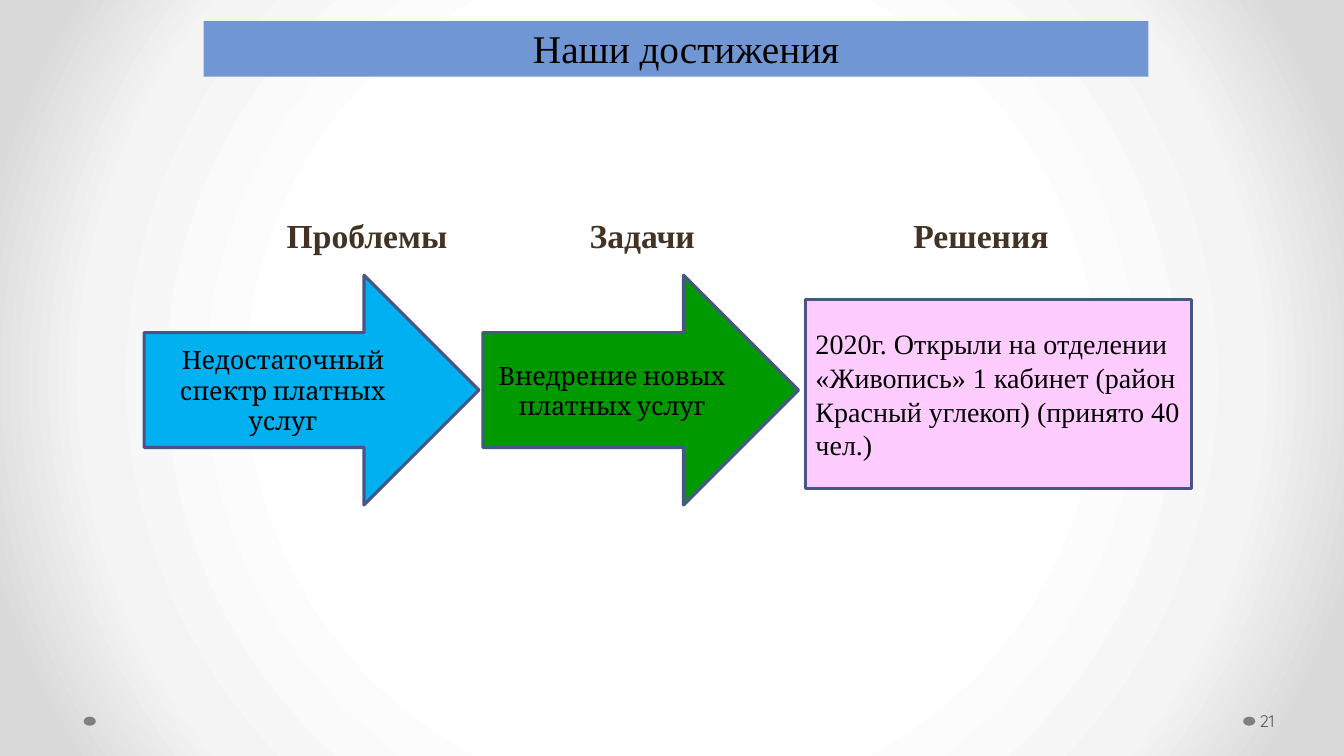
from lxml import etree
from pptx import Presentation
from pptx.dml.color import RGBColor
from pptx.enum import shapes, text
from pptx.oxml.ns import qn
from pptx.util import Inches, Pt

BLACK = RGBColor(0x00, 0x00, 0x00)
BANNER = RGBColor(0x70, 0x97, 0xD3)
BROWN = RGBColor(0x42, 0x33, 0x24)
SKY = RGBColor(0x00, 0xB0, 0xF0)
GREEN = RGBColor(0x00, 0x9A, 0x00)
PINK = RGBColor(0xFF, 0xCC, 0xFF)
OUTLINE = RGBColor(0x47, 0x57, 0x85)
DOT = RGBColor(0x80, 0x80, 0x80)
NUMBER = RGBColor(0x59, 0x59, 0x59)
GLOW = ((50, "FFFFFF"), (76, "F4F4F4"), (92, "DADADA"))
SERIF = "Times New Roman"
LEFT, CENTER = text.PP_ALIGN.LEFT, text.PP_ALIGN.CENTER
MIDDLE = text.MSO_ANCHOR.MIDDLE


def set_text(sp, words, font, size, color, align=CENTER, anchor=MIDDLE, bold=False):
    tf = sp.text_frame
    tf.text = words
    tf.word_wrap = True
    tf.auto_size = text.MSO_AUTO_SIZE.NONE
    tf.vertical_anchor = anchor
    p = tf.paragraphs[0]
    p.alignment = align
    f = p.runs[0].font
    f.name, f.size, f.bold = font, Pt(size), bold
    f.color.rgb = color


def add_block(s, kind, box, fill, line=None):
    sp = s.shapes.add_shape(kind, *map(Inches, box))
    sp.shadow.inherit = False
    sp.fill.solid()
    sp.fill.fore_color.rgb = fill
    if line is None:
        sp.line.fill.background()
    else:
        sp.line.color.rgb = line
        sp.line.width = Pt(2.25)
    return sp


def add_label(s, box, words, font, size, color, **style):
    sp = s.shapes.add_textbox(*map(Inches, box))
    set_text(sp, words, font, size, color, **style)
    return sp


def paint_background(s):
    """Radial gradient, white in the centre and grey at the edges."""
    s.background.fill.gradient()
    grad = s.element.find(".//" + qn("a:gradFill"))
    for child in list(grad):
        grad.remove(child)
    stops = etree.SubElement(grad, qn("a:gsLst"))
    for pos, color in GLOW:
        stop = etree.SubElement(stops, qn("a:gs"), pos=str(pos * 1000))
        etree.SubElement(stop, qn("a:srgbClr"), val=color)
    circle = etree.SubElement(grad, qn("a:path"), path="circle")
    etree.SubElement(circle, qn("a:fillToRect"), {side: "50000" for side in "ltrb"})


def add_banner(s, box):
    title = s.shapes.title
    title.left, title.top, title.width, title.height = map(Inches, box)
    title.fill.solid()
    title.fill.fore_color.rgb = BANNER
    set_text(title, "Наши достижения", SERIF, 28, BLACK,
             anchor=text.MSO_ANCHOR.BOTTOM)
    title.text_frame.margin_left = Inches(0.3)


def add_headings(s, top, height):
    width = 2.4
    for middle, words in ((3.64, "Проблемы"), (6.37, "Задачи"), (9.73, "Решения")):
        add_label(s, (middle - width / 2, top, width, height), words,
                  SERIF, 24, BROWN, bold=True)


def add_flow(s, left, top, height):
    """Problem arrow, task arrow and solution box on one centre line."""
    arrow, rect = shapes.MSO_SHAPE.RIGHT_ARROW, shapes.MSO_SHAPE.RECTANGLE
    problem = add_block(s, arrow, (left, top, 3.32, height), SKY, OUTLINE)
    set_text(problem, "Недостаточный спектр платных услуг", "Cambria", 18, BLACK)
    task = add_block(s, arrow, (left + 3.36, top, 3.13, height), GREEN, OUTLINE)
    set_text(task, "Внедрение новых платных услуг", "Cambria", 18, BLACK)
    solution = add_block(s, rect, (left + 6.56, top + 0.24, 3.83, 1.88), PINK, OUTLINE)
    set_text(solution, "2020г. Открыли на отделении «Живопись» 1 кабинет "
             "(район Красный углекоп) (принято 40 чел.)", SERIF, 20, BLACK, align=LEFT)


def add_footer(s, top):
    for left in (0.83, 12.33):
        add_block(s, shapes.MSO_SHAPE.OVAL, (left, top + 0.16, 0.12, 0.09), DOT)
    number = add_label(s, (12.46, top, 0.82, 0.4), "21", "Quicksand", 12, NUMBER,
                       align=LEFT)
    tf = number.text_frame
    tf.margin_left = Inches(0.03)
    tf.margin_right = Inches(0.05)


def main():
    prs = Presentation()
    prs.slide_width, prs.slide_height = Inches(13.33), Inches(7.5)
    s = prs.slides.add_slide(prs.slide_layouts[5])
    paint_background(s)
    add_banner(s, (2.02, 0.21, 9.37, 0.55))
    add_headings(s, 2.08, 0.5)
    add_flow(s, 1.43, 2.73, 2.28)
    add_footer(s, 6.95)
    prs.save("out.pptx")


if __name__ == "__main__":
    main()
